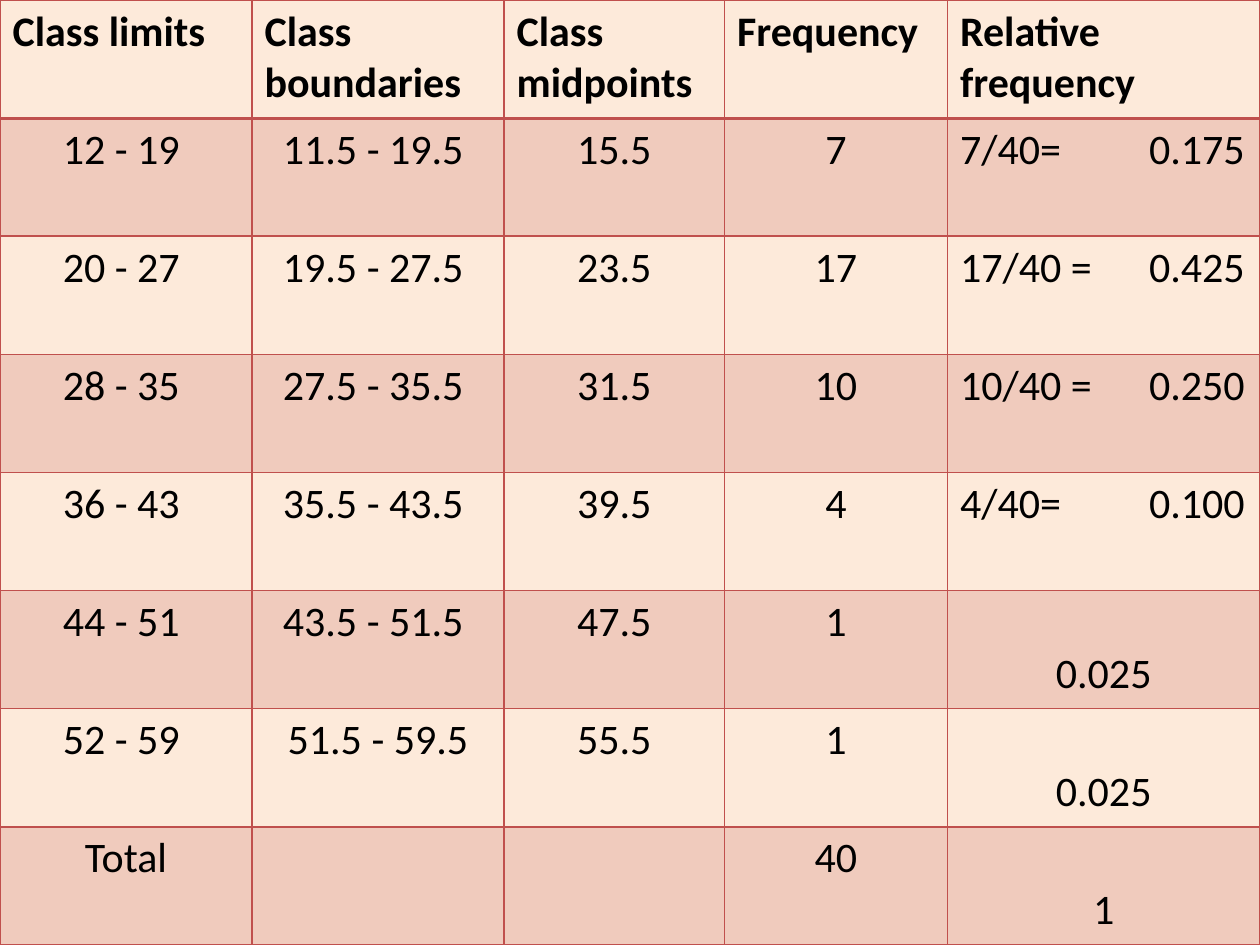
import dataclasses

import pptx
import pptx.dml.color
import pptx.enum.text
import pptx.oxml.xmlchemy
import pptx.util
from lxml import etree
from pptx.oxml.ns import qn
from pptx.util import Inches, Pt


@dataclasses.dataclass(frozen=True)
class Theme:
    font: str = "Calibri"
    size: int = 24
    text: str = "000000"
    background: str = "FDEADA"
    accent: str = "C0504D"
    band_alpha: int = 20
    line: int = 1
    header_line: int = 2


THEME = Theme()
ALIGN = pptx.enum.text.PP_ALIGN
COLUMNS = [2, 2, 1.75, 1.77, 2.48]
HEADERS = ["Class limits", "Class boundaries", "Class midpoints",
           "Frequency", "Relative frequency"]
ROWS = [
    ["12 - 19 ", "11.5 - 19.5 ", "15.5", "7", "7/40=\t0.175"],
    ["20 - 27 ", "19.5 - 27.5 ", "23.5", "17", "17/40 =\t0.425"],
    ["28 - 35 ", "27.5 - 35.5 ", "31.5", "10", "10/40 =\t0.250"],
    ["36 - 43 ", "35.5 - 43.5 ", "39.5", "4", "4/40=\t0.100"],
    ["44 - 51 ", "43.5 - 51.5 ", "47.5", "1", "0.025"],
    ["52 - 59 ", "51.5 - 59.5", "55.5", "1", "0.025"],
    ["Total", "", "", "40", "1"],
]


def rgb(value):
    return pptx.dml.color.RGBColor.from_string(value)


def set_borders(cell, top, bottom):
    tcPr = cell._tc.get_or_add_tcPr()
    for side, width in (("L", THEME.line), ("R", THEME.line), ("T", top), ("B", bottom)):
        ln = etree.SubElement(tcPr, qn(f"a:ln{side}"), w=str(Pt(width)))
        fill = etree.SubElement(ln, qn("a:solidFill"))
        etree.SubElement(fill, qn("a:srgbClr"), val=THEME.accent)


def set_fill(cell, banded):
    if not banded:
        cell.fill.background()
        return
    cell.fill.solid()
    cell.fill.fore_color.rgb = rgb(THEME.accent)
    color = cell._tc.tcPr.find(qn("a:solidFill")).find(qn("a:srgbClr"))
    etree.SubElement(color, qn("a:alpha"), val=str(THEME.band_alpha * 1000))


def add_right_tab(p, position):
    tabs = etree.SubElement(p._p.get_or_add_pPr(), qn("a:tabLst"))
    etree.SubElement(tabs, qn("a:tab"), pos=str(position), algn="r")


def write_cell(cell, text, align, bold):
    p = cell.text_frame.paragraphs[0]
    p.text = text
    p.alignment = align
    for r in p.runs:
        r.font.name = THEME.font
        r.font.size = Pt(THEME.size)
        r.font.bold = bold
        r.font.color.rgb = rgb(THEME.text)
    return p


def write_relative_frequency(cell, text):
    """Set a fraction and its value apart, or a lone value on the second line."""
    if "\t" in text:
        p = write_cell(cell, text, ALIGN.LEFT, False)
        add_right_tab(p, Inches(2.26))
    else:
        write_cell(cell, text, ALIGN.CENTER, False)
        cell.margin_top = Inches(0.46)


def add_frequency_table(s, left, top, width, height):
    count = len(ROWS) + 1
    table = s.shapes.add_table(count, len(COLUMNS), left, top, width, height).table
    table.horz_banding = False
    for column, share in zip(table.columns, COLUMNS):
        column.width = int(width * share / sum(COLUMNS))
    for row in table.rows:
        row.height = height // count

    for i, values in enumerate([HEADERS] + ROWS):
        for j, text in enumerate(values):
            cell = table.cell(i, j)
            set_borders(cell,
                        THEME.header_line if i == 1 else THEME.line,
                        THEME.header_line if i == 0 else THEME.line)
            set_fill(cell, i % 2 == 1)
            if i == 0:
                write_cell(cell, text, ALIGN.LEFT, True)
            elif j == len(COLUMNS) - 1:
                write_relative_frequency(cell, text)
            else:
                write_cell(cell, text, ALIGN.CENTER, False)


def main():
    prs = pptx.Presentation()
    prs.slide_width, prs.slide_height = Inches(10), Inches(7.5)
    s = prs.slides.add_slide(prs.slide_layouts[6])
    s.background.fill.solid()
    s.background.fill.fore_color.rgb = rgb(THEME.background)
    add_frequency_table(s, Inches(0), Inches(0), prs.slide_width, prs.slide_height)
    prs.save("out.pptx")


if __name__ == "__main__":
    main()
